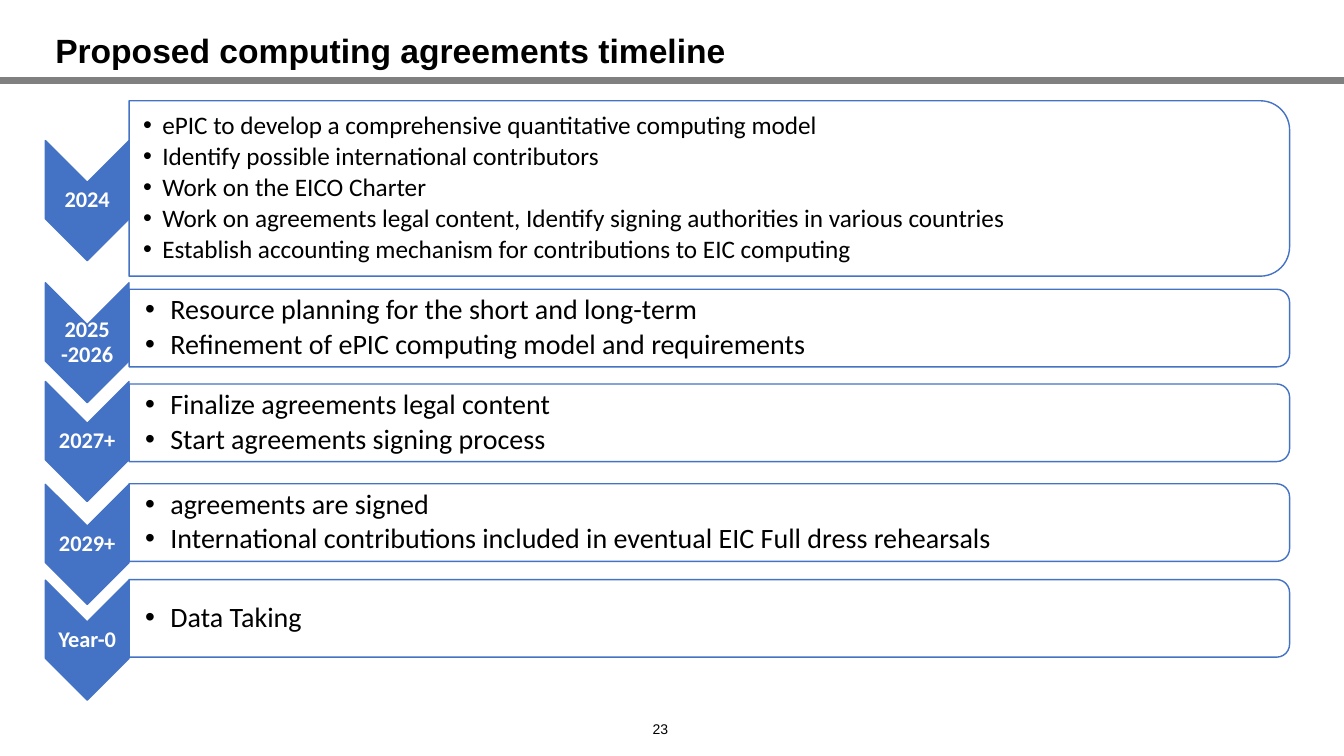
"""Build the computing agreements timeline slide."""
import pptx
import pptx.dml.color
import pptx.enum.shapes
import pptx.enum.text
import pptx.util
from lxml import etree
from pptx.oxml.ns import qn

Inches = pptx.util.Inches
Pt = pptx.util.Pt
SHAPES = pptx.enum.shapes.MSO_SHAPE
CENTER = pptx.enum.text.PP_ALIGN.CENTER
LEFT = pptx.enum.text.PP_ALIGN.LEFT

TITLE = "Proposed computing agreements timeline"
PAGE_NUMBER = "23"
LARGE = {"size": 18, "indent": 0.19, "inset": 0.14, "pad": 0.08, "height": 1.74}
SMALL = {"size": 20, "indent": 0.25, "inset": 0.16, "pad": 0.03, "height": 0.77}
STAGES = [
    ("2024", 1.99, 1.0, LARGE, [
        "ePIC to develop a comprehensive quantitative computing model",
        "Identify possible international contributors",
        "Work on the EICO Charter",
        "Work on agreements legal content, Identify signing authorities in various countries",
        "Establish accounting mechanism for contributions to EIC computing"]),
    ("2025 -2026", 3.4, 2.87, SMALL, [
        "Resource planning for the short and long-term",
        "Refinement of ePIC computing model and requirements"]),
    ("2027+", 4.38, 3.81, SMALL, [
        "Finalize agreements legal content",
        "Start agreements signing process"]),
    ("2029+", 5.4, 4.8, SMALL, [
        "agreements are signed",
        "International contributions included in eventual EIC Full dress rehearsals"]),
    ("Year-0", 6.35, 5.75, SMALL, ["Data Taking"]),
]
BLUE, WHITE, BLACK, GRAY = "4472C4", "FFFFFF", "000000", "808080"
CHEVRON_LEFT, CHEVRON_LENGTH, CHEVRON_WIDTH, LABEL_HEIGHT = 0.45, 1.19, 0.83, 0.36
CARD_LEFT, CARD_WIDTH = 1.28, 11.51


def color(code):
    return pptx.dml.color.RGBColor.from_string(code)


def add_turned(slide, preset, left, top, width, height, fill):
    """Add a preset turned a quarter clockwise so that it shows in the given box."""
    shape = slide.shapes.add_shape(
        preset, Inches(left + (width - height) / 2), Inches(top + (height - width) / 2),
        Inches(height), Inches(width))
    shape.rotation = 90
    shape.shadow.inherit = False
    shape.fill.solid()
    shape.fill.fore_color.rgb = color(fill)
    shape.line.color.rgb = color(BLUE)
    shape.line.width = Pt(1)
    return shape


def add_text(slide, box, lines, size, font, ink=BLACK, bold=False, align=LEFT,
             spacing=0.9, insets=None, indent=0):
    """Add a text box, bulleted when an indent is given."""
    frame = slide.shapes.add_textbox(*map(Inches, box)).text_frame
    frame.word_wrap = True
    frame.vertical_anchor = pptx.enum.text.MSO_ANCHOR.MIDDLE
    if insets:
        (frame.margin_left, frame.margin_top,
         frame.margin_right, frame.margin_bottom) = map(Inches, insets)
    frame.text = "\n".join(lines)
    for paragraph in frame.paragraphs:
        paragraph.alignment = align
        paragraph.line_spacing = spacing
        if indent:
            paragraph.space_after = Pt(size * 0.15)
            properties = paragraph._p.get_or_add_pPr()
            properties.set("marL", str(Inches(indent)))
            properties.set("indent", str(-Inches(indent)))
            etree.SubElement(properties, qn("a:buFont")).set("typeface", "Arial")
            etree.SubElement(properties, qn("a:buChar")).set("char", "•")
        for run in paragraph.runs:
            run.font.size = Pt(size)
            run.font.name = font
            run.font.bold = bold
            run.font.color.rgb = color(ink)


def add_stage(slide, label, middle, card_top, style, items):
    """Add one chevron with its year and the card beside it."""
    add_turned(slide, SHAPES.CHEVRON, CHEVRON_LEFT, middle - CHEVRON_LENGTH / 2,
               CHEVRON_WIDTH, CHEVRON_LENGTH, BLUE)
    add_text(slide, (CHEVRON_LEFT, middle - LABEL_HEIGHT / 2, CHEVRON_WIDTH, LABEL_HEIGHT),
             [label], 16, "Calibri", WHITE, True, CENTER, insets=(0.01,) * 4)
    card = add_turned(slide, SHAPES.ROUND_2_SAME_RECTANGLE, CARD_LEFT, card_top,
                      CARD_WIDTH, style["height"], WHITE)
    fill = card._element.spPr.find(qn("a:solidFill"))
    etree.SubElement(fill[0], qn("a:alpha")).set("val", "90000")
    pad = style["pad"]
    add_text(slide, (CARD_LEFT, card_top + pad, CARD_WIDTH - pad, style["height"] - 2 * pad),
             items, style["size"], "Calibri",
             insets=(style["inset"], 0.01, 0.01, 0.01), indent=style["indent"])


def main():
    deck = pptx.Presentation()
    deck.slide_width, deck.slide_height = Inches(13.33), Inches(7.5)
    slide = deck.slides.add_slide(deck.slide_layouts[6])
    rule = slide.shapes.add_connector(pptx.enum.shapes.MSO_CONNECTOR.STRAIGHT,
                                      0, Inches(0.8), deck.slide_width, Inches(0.8))
    rule.line.color.rgb = color(GRAY)
    rule.line.width = Pt(4.5)
    etree.SubElement(rule._element.spPr, qn("a:effectLst"))
    add_text(slide, (0.45, 0.26, 12.34, 0.53), [TITLE], 24, "Arial", bold=True)
    for stage in STAGES:
        add_stage(slide, *stage)
    add_text(slide, (6.16, 7.07, 0.78, 0.33), [PAGE_NUMBER], 10, "Arial",
             align=CENTER, spacing=1.0)
    deck.save("out.pptx")


if __name__ == "__main__":
    main()
